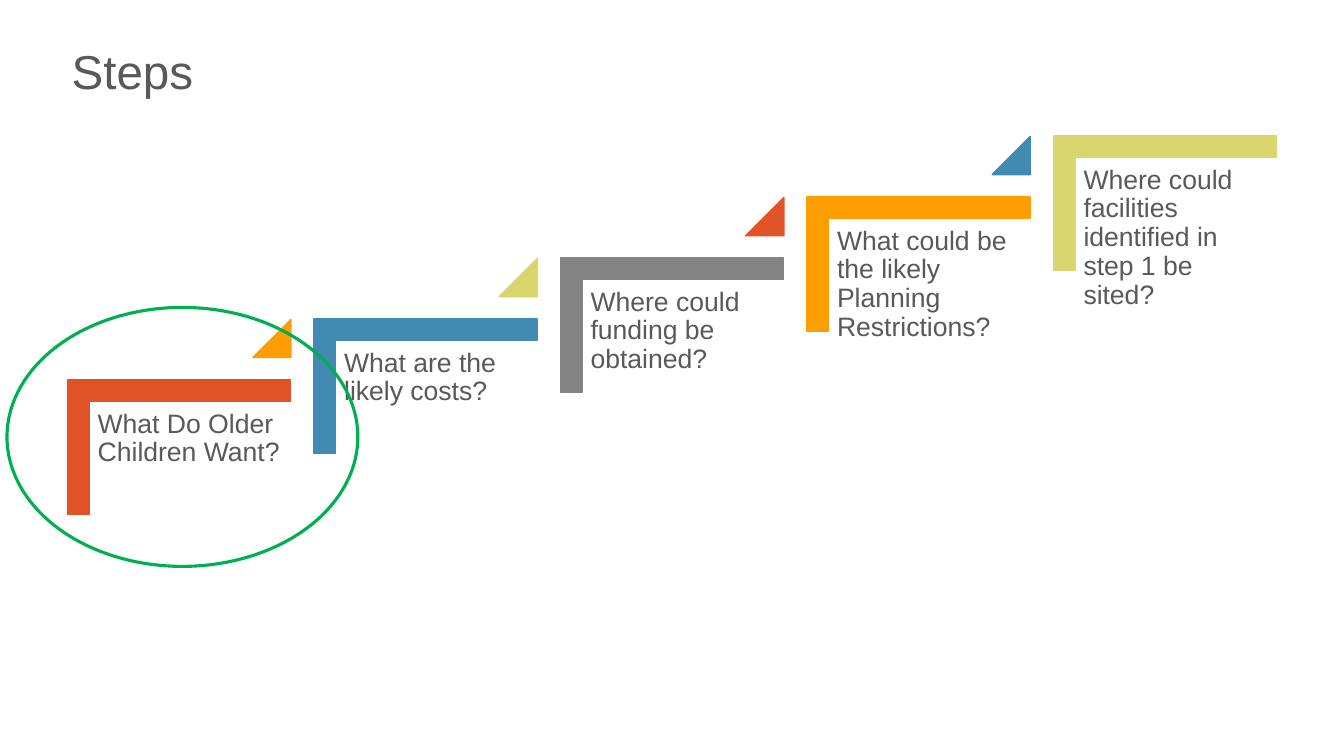
from pptx import Presentation
from pptx.dml.color import RGBColor
from pptx.enum.shapes import MSO_SHAPE
from pptx.enum.text import MSO_ANCHOR, MSO_AUTO_SIZE, PP_ALIGN
from pptx.util import Pt

COLORS = {
    "text": "595959",
    "red": "DF5327",
    "orange": "FE9E00",
    "blue": "418AB3",
    "lime": "D9D66D",
    "gray": "838383",
    "green": "00B050",
}

# Question, bracket colour, colour of the triangle leading to the next step
STEPS = [
    ("What Do Older Children Want?", "red", "orange"),
    ("What are the likely costs?", "blue", "lime"),
    ("Where could funding be obtained?", "gray", "red"),
    ("What could be the likely Planning Restrictions?", "orange", "blue"),
    ("Where could facilities identified in step 1 be sited?", "lime", None),
]
STEP_RIGHT, STEP_UP = 176.04, 43.56


def style_text(paragraph, size):
    paragraph.alignment = PP_ALIGN.LEFT
    paragraph.line_spacing = 0.9
    paragraph.font.name = "Arial"
    paragraph.font.size = Pt(size)
    paragraph.font.color.rgb = RGBColor.from_string(COLORS["text"])


def add_solid(preset, left, top, width, height, color):
    solid = slide.shapes.add_shape(preset, Pt(left), Pt(top), Pt(width), Pt(height))
    solid.shadow.inherit = False
    solid.fill.solid()
    solid.fill.fore_color.rgb = RGBColor.from_string(COLORS[color])
    solid.line.color.rgb = RGBColor.from_string(COLORS[color])
    solid.line.width = Pt(1)
    return solid


prs = Presentation()
prs.slide_width, prs.slide_height = Pt(960), Pt(540)
slide = prs.slides.add_slide(prs.slide_layouts[5])

title = slide.shapes.title
title.left, title.top, title.width, title.height = Pt(44), Pt(23.8), Pt(868), Pt(51)
title.text_frame.text = "Steps"
title.text_frame.auto_size = MSO_AUTO_SIZE.NONE
title.text_frame.vertical_anchor = MSO_ANCHOR.BOTTOM
style_text(title.text_frame.paragraphs[0], 34)

for index, (question, bracket_color, triangle_color) in enumerate(STEPS):
    x = 64 + index * STEP_RIGHT
    y = 287.2 - index * STEP_UP

    bracket = add_solid(MSO_SHAPE.CORNER, x + 16, y - 47.4, 95.8, 159.2, bracket_color)
    bracket.rotation = 90
    bracket.adjustments[0] = bracket.adjustments[1] = 0.161

    label = slide.shapes.add_textbox(Pt(x), Pt(y), Pt(144), Pt(126)).text_frame
    label.word_wrap = True
    label.margin_left = label.margin_right = Pt(5.8)
    label.margin_top = label.margin_bottom = Pt(5.8)
    label.text = question
    style_text(label.paragraphs[0], 19)

    if triangle_color:
        triangle = add_solid(
            MSO_SHAPE.ISOSCELES_TRIANGLE, x + 116.6, y - 59, 27.2, 27.2, triangle_color
        )
        triangle.adjustments[0] = 1

highlight = slide.shapes.add_shape(MSO_SHAPE.OVAL, Pt(5), Pt(219.6), Pt(250.6), Pt(185))
highlight.shadow.inherit = False
highlight.fill.background()
highlight.line.color.rgb = RGBColor.from_string(COLORS["green"])
highlight.line.width = Pt(2.25)

prs.save("out.pptx")
